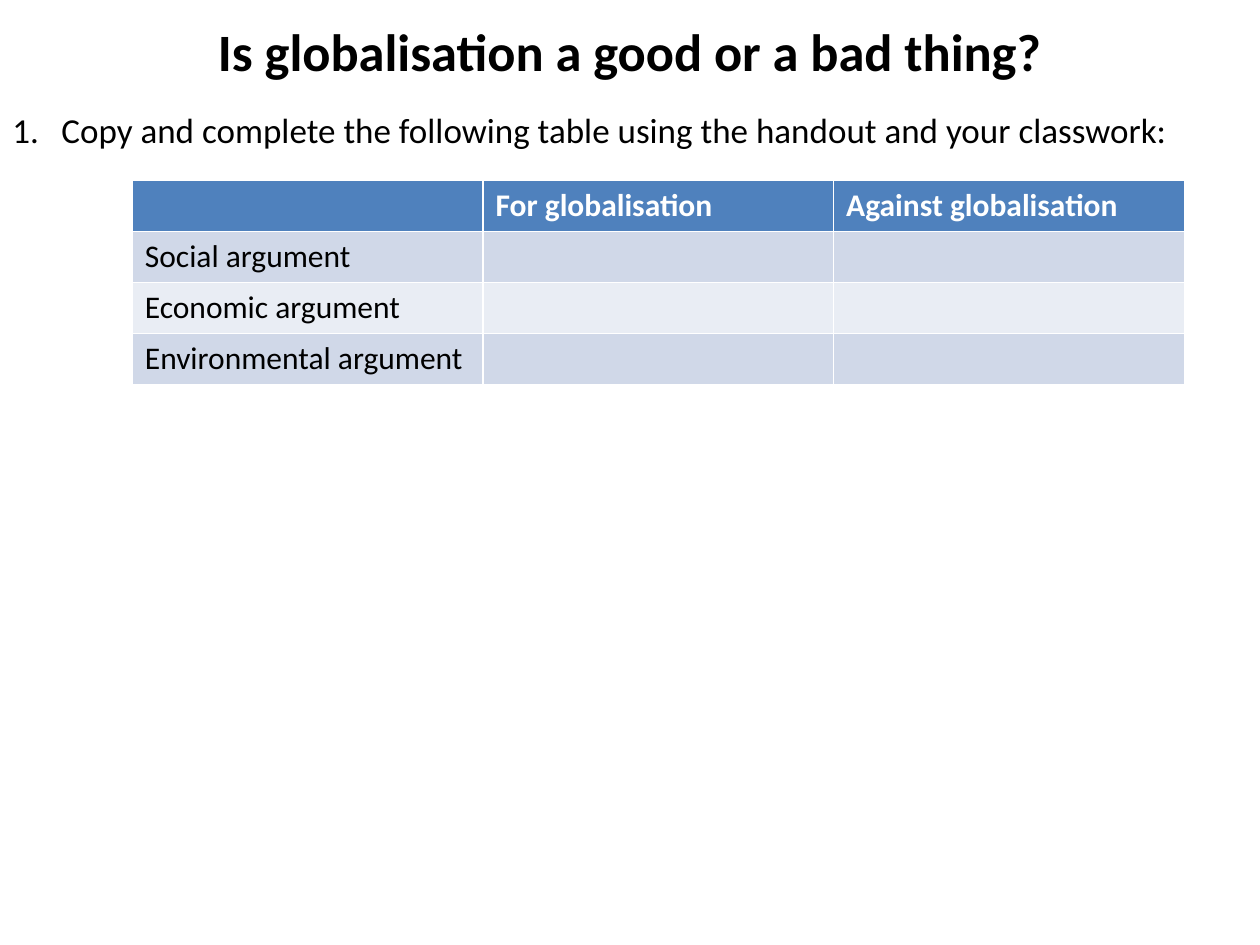
from lxml import etree
from pptx import Presentation
from pptx.dml.color import RGBColor
from pptx.enum import text
from pptx.oxml.ns import qn
from pptx.util import Pt

HEADER_FILL = "4F81BD"
BAND_FILLS = ("D0D8E8", "E9EDF4")
ROWS = [
    ("", "For globalisation", "Against globalisation"),
    ("Social argument", "", ""),
    ("Economic argument", "", ""),
    ("Environmental argument", "", ""),
]


def colour(value):
    return RGBColor.from_string(value)


def format_font(font, value="000000", **settings):
    for name, setting in {"name": "Calibri", "bold": False, **settings}.items():
        setattr(font, name, setting)
    font.color.rgb = colour(value)


def format_frame(frame):
    settings = {
        "word_wrap": True,
        "auto_size": text.MSO_AUTO_SIZE.NONE,
        "vertical_anchor": text.MSO_ANCHOR.TOP,
        "margin_left": Pt(7.2),
        "margin_right": Pt(7.2),
        "margin_top": Pt(3.6),
        "margin_bottom": Pt(3.6),
    }
    for name, setting in settings.items():
        setattr(frame, name, setting)


def place_title(slide, left, top, width, height):
    title = slide.shapes.title
    box = {"left": left, "top": top, "width": width, "height": height}
    for name, length in box.items():
        setattr(title, name, Pt(length))
    format_frame(title.text_frame)
    paragraph = title.text_frame.paragraphs[0]
    paragraph.text = "Is globalisation a good or a bad thing?"
    paragraph.alignment = text.PP_ALIGN.CENTER
    format_font(paragraph.runs[0].font, size=Pt(30), bold=True)


def add_task(slide, left, top, width, height):
    """Add the numbered instruction with a hanging indent."""
    box = slide.shapes.add_textbox(Pt(left), Pt(top), Pt(width), Pt(height))
    format_frame(box.text_frame)
    paragraph = box.text_frame.paragraphs[0]
    paragraph.text = (
        "Copy and complete the following table using the handout and your classwork:"
    )
    paragraph.space_after = Pt(6)
    format_font(paragraph.runs[0].font, size=Pt(20))
    properties = paragraph._p.get_or_add_pPr()
    indent = Pt(28)
    properties.set("marL", str(indent))
    properties.set("indent", str(-indent))
    etree.SubElement(properties, qn("a:buFont"), typeface="+mj-lt")
    etree.SubElement(properties, qn("a:buAutoNum"), type="arabicPeriod")


def add_arguments_table(slide, left, top, width, height):
    frame = slide.shapes.add_table(
        len(ROWS), len(ROWS[0]), Pt(left), Pt(top), Pt(width), Pt(height)
    )
    table = frame.table
    for row_index, labels in enumerate(ROWS):
        is_header = row_index == 0
        fill = HEADER_FILL if is_header else BAND_FILLS[(row_index - 1) % 2]
        for column_index, label in enumerate(labels):
            cell = table.cell(row_index, column_index)
            cell.fill.solid()
            cell.fill.fore_color.rgb = colour(fill)
            if label:
                cell.text = label
                format_font(
                    cell.text_frame.paragraphs[0].runs[0].font,
                    "FFFFFF" if is_header else "000000",
                    size=Pt(18),
                    bold=is_header,
                )


def main():
    presentation = Presentation()
    presentation.slide_width, presentation.slide_height = Pt(720), Pt(540)
    slide = presentation.slides.add_slide(presentation.slide_layouts[5])
    place_title(slide, 0, 7.2, 720, 43.6)
    add_task(slide, 0, 58.3, 720, 31.5)
    add_arguments_table(slide, 75.6, 103, 601.2, 116.8)
    presentation.save("out.pptx")


if __name__ == "__main__":
    main()
